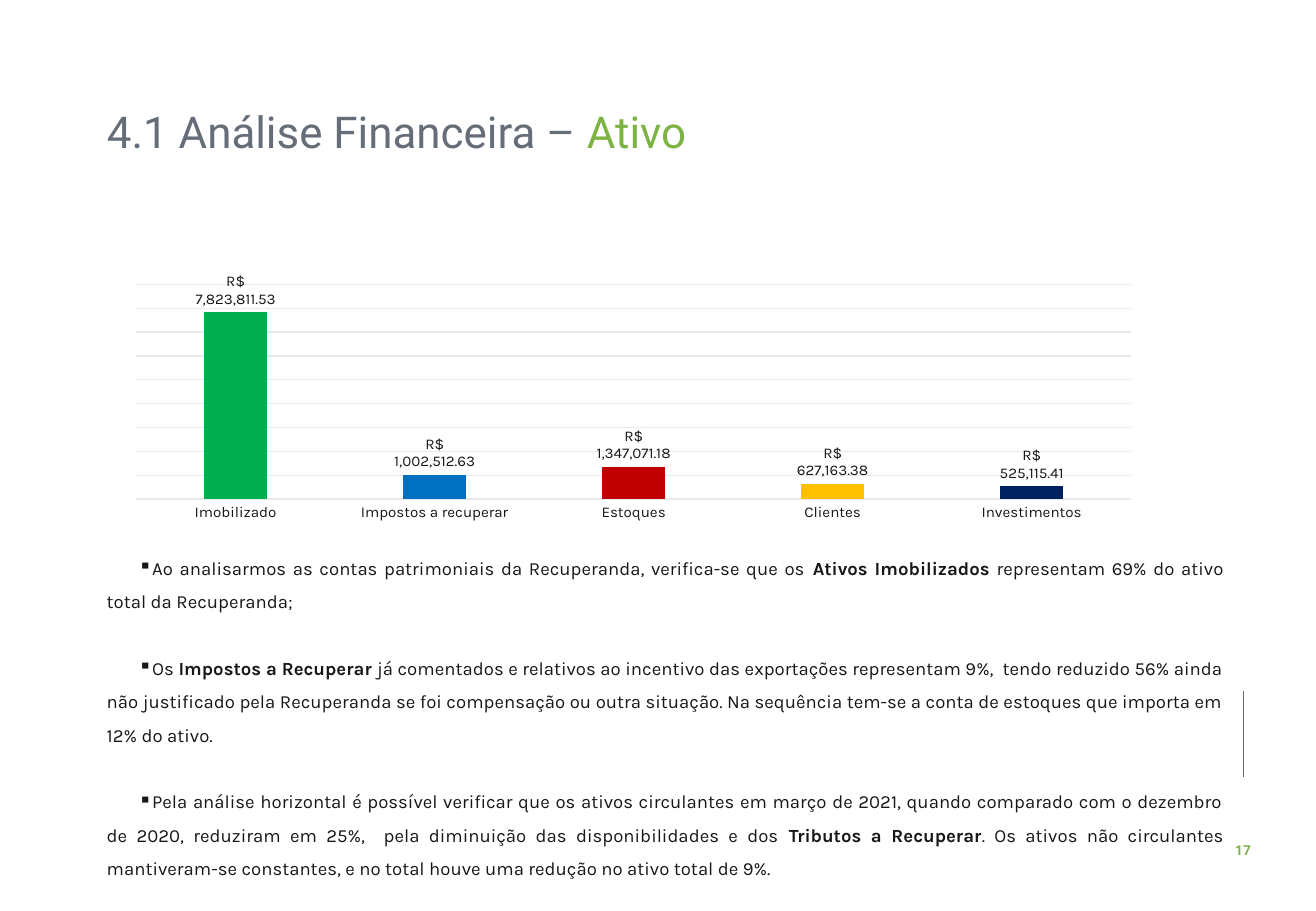
import pptx
import pptx.chart.data
import pptx.dml.color
import pptx.enum.chart
import pptx.enum.shapes
import pptx.enum.text
import pptx.oxml
import pptx.util
from lxml import etree

Inches = pptx.util.Inches
Pt = pptx.util.Pt
ALIGN = pptx.enum.text.PP_ALIGN
DARK, GREY, GREEN, PALE = "181717", "656D78", "7CB342", "E7E9EB"
MONEY = '"R$"\\ #,##0.00'
ASSETS = [
    ("Imobilizado", 7823811.53, "00B050"),
    ("Impostos a recuperar", 1002512.63, "0070C0"),
    ("Estoques", 1347071.18, "C00000"),
    ("Clientes", 627163.38, "FFC000"),
    ("Investimentos", 525115.41, "002060"),
]
NOTES = [
    ("Ao analisarmos as contas patrimoniais da Recuperanda, verifica-se que os ",
     "Ativos Imobilizados",
     " representam 69% do ativo total da Recuperanda;"),
    ("Os ",
     "Impostos a Recuperar ",
     "já comentados e relativos ao incentivo das exportações representam 9%,  tendo "
     "reduzido 56% ainda não justificado pela Recuperanda se foi compensação ou outra "
     "situação. Na sequência tem-se a conta de estoques que importa em 12% do ativo."),
    ("Pela análise horizontal é possível verificar que os ativos circulantes em março "
     "de 2021, quando comparado com o dezembro de 2020, reduziram em 25%,  pela "
     "diminuição das disponibilidades e dos ",
     "Tributos a Recuperar",
     ". Os ativos não circulantes mantiveram-se constantes, e no total houve uma "
     "redução no ativo total de 9%."),
]


def color(code):
    """Return the colour of a hex string."""
    return pptx.dml.color.RGBColor.from_string(code)


def style(font, size, name="Karla", code=DARK, bold=False):
    """Format a font."""
    font.size, font.name, font.bold = Pt(size), name, bold
    font.color.rgb = color(code)


def write(para, text, **look):
    """Add a run of text in the given format."""
    run = para.add_run()
    run.text = text
    style(run.font, **look)


def place(shape, box):
    """Move a shape to a box of left, top, width and height in inches."""
    shape.left, shape.top, shape.width, shape.height = map(Inches, box)


def add_title(slide, box):
    """Fill the title placeholder in two colours."""
    title = slide.shapes.title
    place(title, box)
    frame = title.text_frame
    frame.word_wrap = True
    frame.auto_size = pptx.enum.text.MSO_AUTO_SIZE.NONE
    frame.vertical_anchor = pptx.enum.text.MSO_ANCHOR.TOP
    para = frame.paragraphs[0]
    para.alignment, para.line_spacing = ALIGN.LEFT, 0.9
    for text, code in [("4.1 Análise Financeira – ", GREY), ("Ativo", GREEN)]:
        write(para, text, size=26, name="Roboto", code=code)


def add_chart(slide, box):
    """Draw the asset columns, one colour to each account."""
    names, sums, codes = zip(*ASSETS)
    data = pptx.chart.data.CategoryChartData(number_format=MONEY)
    data.categories = names
    data.add_series("Series 1", sums)
    kind = pptx.enum.chart.XL_CHART_TYPE.COLUMN_CLUSTERED
    chart = slide.shapes.add_chart(kind, *map(Inches, box), data).chart
    chart.has_legend = chart.has_title = False
    style(chart.font, 10, "Calibri", GREY)

    axis = chart.category_axis
    axis.major_tick_mark = pptx.enum.chart.XL_TICK_MARK.NONE
    style(axis.tick_labels.font, 9)
    scale = chart.value_axis
    scale.visible = False
    scale.minimum_scale, scale.maximum_scale, scale.major_unit = 0, 9e6, 1e6
    scale.has_major_gridlines = True
    for line in (axis.format.line, scale.major_gridlines.format.line):
        line.color.rgb, line.width = color(PALE), Pt(0.75)

    plot = chart.plots[0]
    plot.gap_width, plot.overlap, plot.vary_by_categories = 219, -27, False
    series = plot.series[0]
    series.invert_if_negative = False
    for spot, code in enumerate(codes):
        fill = series.points[spot].format.fill
        fill.solid()
        fill.fore_color.rgb = color(code)
    labels = series.data_labels
    labels.show_value = True
    labels.number_format, labels.number_format_is_linked = MONEY, False
    labels.position = pptx.enum.chart.XL_LABEL_POSITION.OUTSIDE_END
    style(labels.font, 9)


def add_notes(slide, box):
    """Write the justified bullet notes, each with a bold middle part."""
    frame = slide.shapes.add_textbox(*map(Inches, box)).text_frame
    frame.word_wrap = True
    for rank, parts in enumerate(NOTES):
        para = frame.add_paragraph() if rank else frame.paragraphs[0]
        para.alignment, para.line_spacing = ALIGN.JUSTIFY, 1.5
        if rank:
            para.space_before = Pt(19.8)
        props = para._p.get_or_add_pPr()
        props.set("marL", "0")
        props.set("indent", str(Inches(0.26)))
        bullet = etree.SubElement(props, pptx.oxml.ns.qn("a:buChar"))
        bullet.set("char", "▪")
        for spot, text in enumerate(parts):
            write(para, text, size=11, bold=spot == 1)


def add_page(slide, box):
    """Draw the margin line and the page number below it."""
    left, top, width, height = box
    straight = pptx.enum.shapes.MSO_CONNECTOR.STRAIGHT
    mid = left + width / 2
    ends = map(Inches, (mid, top, mid, top + 0.71))
    line = slide.shapes.add_connector(straight, *ends)
    line.line.color.rgb, line.line.width = color(GREY), Pt(0.5)
    etree.SubElement(line._element.spPr, pptx.oxml.ns.qn("a:effectLst"))
    spot = map(Inches, (left, top + height - 0.24, width, 0.24))
    frame = slide.shapes.add_textbox(*spot).text_frame
    frame.word_wrap = False
    para = frame.paragraphs[0]
    para.alignment = ALIGN.CENTER
    write(para, "17", size=8.1, name="Roboto", code=GREEN, bold=True)


def main():
    """Build and save the slide."""
    deck = pptx.Presentation()
    deck.slide_width, deck.slide_height = Inches(10.83), Inches(7.5)
    slide = deck.slides.add_slide(deck.slide_layouts[5])
    add_page(slide, (10.06, 5.69, 0.34, 1.43))
    add_title(slide, (0.78, 0.86, 8.18, 0.53))
    add_notes(slide, (0.78, 4.44, 9.39, 2.32))
    add_chart(slide, (0.95, 2.25, 8.53, 2.08))
    deck.save("out.pptx")


if __name__ == "__main__":
    main()
